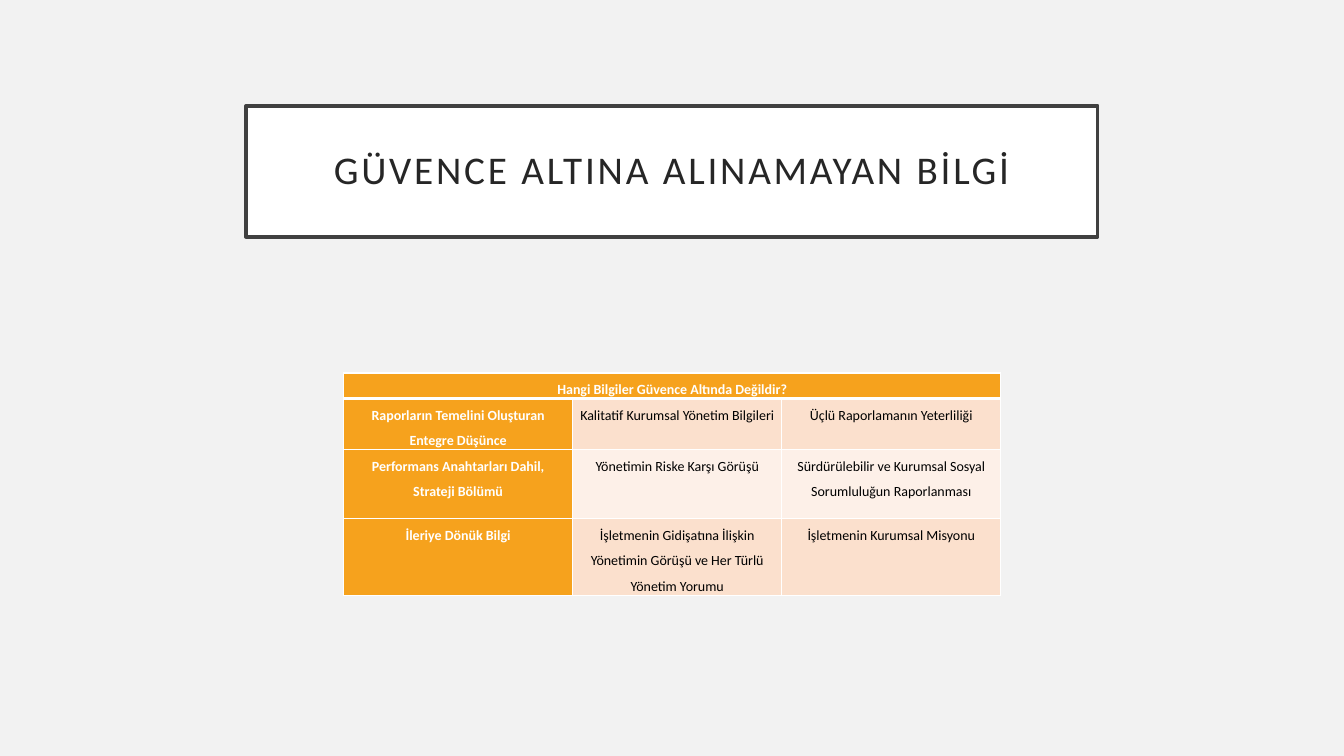
from lxml import etree
from pptx import Presentation
from pptx.dml.color import RGBColor
from pptx.enum import shapes, text
from pptx.oxml import parse_xml
from pptx.oxml.ns import nsdecls
from pptx.util import Pt

WHITE, ORANGE = "FFFFFF", "F6A21D"


def color(value):
    return RGBColor.from_string(value)


def write(frame, words, size, ink, spacing, bold=False):
    """Fill a text frame with one centred paragraph and return its run."""
    frame.word_wrap = True
    para = frame.paragraphs[0]
    para.alignment = text.PP_ALIGN.CENTER
    para.line_spacing = spacing
    span = para.add_run()
    span.text = words
    span.font.name = "Calibri"
    span.font.size = Pt(size)
    span.font.bold = bold
    span.font.color.rgb = color(ink)
    return span


deck = Presentation()
deck.slide_width, deck.slide_height = Pt(960), Pt(540)
page = deck.slides.add_slide(deck.slide_layouts[6])
page.background.fill.solid()
page.background.fill.fore_color.rgb = color("F2F2F2")

# Title box
title = page.shapes.add_shape(
    shapes.MSO_SHAPE.RECTANGLE, Pt(175.7), Pt(75.6), Pt(608.4), Pt(93.6))
title.shadow.inherit = False
title.fill.solid()
title.fill.fore_color.rgb = color(WHITE)
title.line.color.rgb = color("404040")
title.line.width = Pt(2.5)
frame = title.text_frame
frame.vertical_anchor = text.MSO_ANCHOR.MIDDLE
frame.margin_left = frame.margin_right = Pt(14.4)
frame.margin_top = frame.margin_bottom = Pt(14.4)
span = write(frame, "GÜVENCE ALTINA ALINAMAYAN BİLGİ", 28, "262626", 0.9)
span.font._element.set("spc", "200")

# Table of information that is not assured
rows = [
    ["Hangi Bilgiler Güvence Altında Değildir?", "", ""],
    ["Raporların Temelini Oluşturan Entegre Düşünce",
     "Kalitatif Kurumsal Yönetim Bilgileri",
     "Üçlü Raporlamanın Yeterliliği"],
    ["Performans Anahtarları Dahil, Strateji Bölümü",
     "Yönetimin Riske Karşı Görüşü",
     "Sürdürülebilir ve Kurumsal Sosyal Sorumluluğun Raporlanması"],
    ["İleriye Dönük Bilgi",
     "İşletmenin Gidişatına İlişkin Yönetimin Görüşü ve Her Türlü Yönetim Yorumu",
     "İşletmenin Kurumsal Misyonu"],
]
widths = [163.4, 149.6, 156.2]
heights = [18.3, 36.4, 49.3, 54.9]
bands = [ORANGE, "FBE0CD", "FDF0E8", "FBE0CD"]

table = page.shapes.add_table(
    len(rows), len(widths), Pt(245.5), Pt(266.4),
    Pt(sum(widths)), Pt(sum(heights))).table
for column, width in zip(table.columns, widths):
    column.width = Pt(width)
for row, height in zip(table.rows, heights):
    row.height = Pt(height)
table.cell(0, 0).merge(table.cell(0, 2))

for r, row in enumerate(rows):
    for c, words in enumerate(row):
        cell = table.cell(r, c)
        heading = r == 0 or c == 0
        cell.margin_left = cell.margin_right = Pt(5)
        cell.margin_top = cell.margin_bottom = 0
        if words:
            write(cell.text_frame, words, 10,
                  WHITE if heading else "000000", 1.5, heading)
        cell.fill.solid()
        cell.fill.fore_color.rgb = color(ORANGE if heading else bands[r])
        properties = cell._tc.get_or_add_tcPr()
        for place, side in enumerate("LRTB"):
            thick = (r, side) in [(0, "B"), (1, "T")]
            properties.insert(place, parse_xml(
                f'<a:ln{side} {nsdecls("a")} w="{Pt(3 if thick else 1)}">'
                f'<a:solidFill><a:srgbClr val="{WHITE}"/></a:solidFill>'
                f'</a:ln{side}>'))

deck.save("out.pptx")
